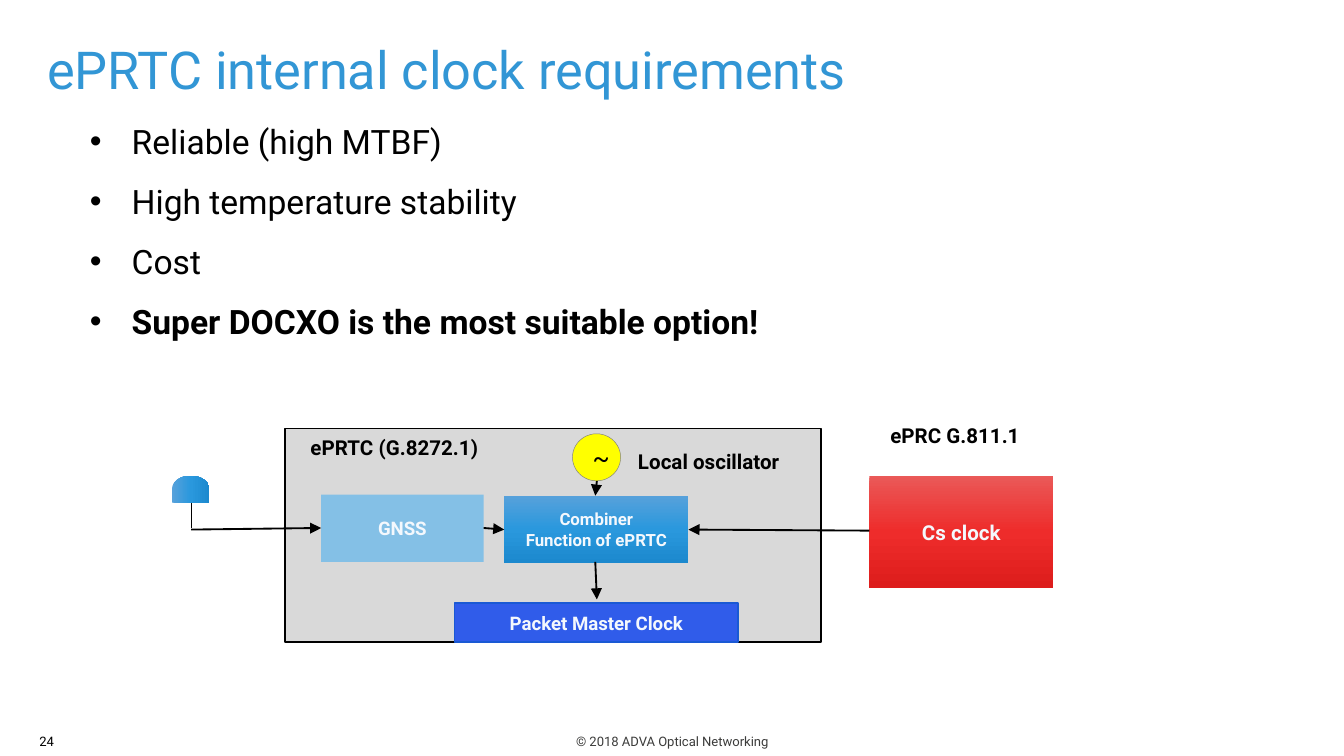
from lxml import etree
from pptx import Presentation
from pptx.dml.color import RGBColor
from pptx.enum import shapes, text
from pptx.oxml import ns
from pptx.util import Cm, Pt

rgb = RGBColor.from_string
MSO, AL, ANC = shapes.MSO_SHAPE, text.PP_ALIGN, text.MSO_ANCHOR
BLUE = ("57A1DB", "2A98DD", "1C89CE")
RED = ("EA5958", "EE2C2B", "DD1D1C")
PALE = "F4F8FD"

prs = Presentation()
prs.slide_width, prs.slide_height = Cm(25.4), Cm(14.29)
s = prs.slides.add_slide(prs.slide_layouts[6])


def write(sp, words, size, color="000000", bold=False, align=AL.CENTER, anchor=ANC.TOP):
    tf = sp.text_frame
    tf.word_wrap = True
    tf.vertical_anchor = anchor
    tf.text = words
    for p in tf.paragraphs:
        p.alignment = align
        for r in p.runs:
            r.font.name, r.font.size, r.font.bold = "Roboto", Pt(size), bold
            r.font.color.rgb = rgb(color)
    return tf


def block(kind, x, y, w, h, fill, line=None, width=1):
    sp = s.shapes.add_shape(kind, Cm(x), Cm(y), Cm(w), Cm(h))
    sp.shadow.inherit = False
    if kind == MSO.ROUNDED_RECTANGLE:
        sp.adjustments[0] = 0
    if isinstance(fill, tuple):
        sp.fill.gradient()
        sp.fill.gradient_angle = 270
        stops = sp._element.spPr.find(ns.qn("a:gradFill")).find(ns.qn("a:gsLst"))
        for old in list(stops):
            stops.remove(old)
        for i, color in enumerate(fill):
            gs = etree.SubElement(stops, ns.qn("a:gs"), pos=str(i * 50000))
            etree.SubElement(gs, ns.qn("a:srgbClr"), val=color)
    else:
        sp.fill.solid()
        sp.fill.fore_color.rgb = rgb(fill)
    if line:
        sp.line.color.rgb = rgb(line)
        sp.line.width = Pt(width)
    else:
        sp.line.fill.background()
    return sp


# Footer and page number
for x, w, words, color, align in [
    (0.64, 24.13, "© 2018 ADVA Optical Networking", "3C3C3B", AL.CENTER),
    (0, 1.27, "24", "000000", AL.RIGHT),
]:
    sp = s.shapes.add_textbox(Cm(x), Cm(13.74), Cm(w), Cm(0.56))
    write(sp, words, 7, color, align=align)

# Title
sp = s.shapes.add_textbox(Cm(0.64), Cm(0), Cm(24.13), Cm(1.9))
tf = write(sp, "ePRTC internal clock requirements", 28, "3296D5", align=AL.LEFT, anchor=ANC.BOTTOM)
tf.margin_left = Cm(0.25)
tf.margin_top = tf.margin_right = tf.margin_bottom = 0
tf.paragraphs[0].line_spacing = 0.9

# Requirements list
items = ["Reliable (high MTBF)", "High temperature stability", "Cost",
         "Super DOCXO is the most suitable option!"]
sp = s.shapes.add_textbox(Cm(1.45), Cm(2.16), Cm(22.56), Cm(11.2))
tf = write(sp, "\n".join(items), 18, align=AL.LEFT)
for i, p in enumerate(tf.paragraphs):
    pPr = p._p.get_or_add_pPr()
    pPr.set("marL", str(Cm(0.79)))
    pPr.set("indent", str(-Cm(0.79)))
    etree.SubElement(pPr, ns.qn("a:buFont"), typeface="Arial")
    etree.SubElement(pPr, ns.qn("a:buChar"), char="•")
    p.space_before, p.space_after = Pt(7.5 if i else 0), Pt(3)
tf.paragraphs[-1].runs[0].font.bold = True

# ePRTC enclosure and antenna
block(MSO.ROUNDED_RECTANGLE, 5.38, 8.1, 10.13, 4.04, "D9D9D9", "000000")
sp = block(MSO.FLOWCHART_DELAY, 3.35, 8.89, 0.51, 0.71, BLUE)
sp.rotation = 270

# Function blocks
for x, y, w, h, fill, line, words, size in [
    (6.07, 9.35, 3.07, 1.27, "84C0E6", None, "GNSS", 10),
    (8.59, 11.4, 5.36, 0.74, "305CEA", "1A59D4", "Packet Master Clock", 10),
    (16.43, 8.99, 3.48, 2.13, RED, None, "Cs clock", 11),
    (9.53, 9.37, 3.48, 1.27, BLUE, None, "Combiner\nFunction of ePRTC", 9),
]:
    sp = block(MSO.ROUNDED_RECTANGLE, x, y, w, h, fill, line)
    tf = write(sp, words, size, PALE, True, anchor=ANC.MIDDLE)
    tf.margin_left = tf.margin_right = Cm(0.18)
    tf.margin_top = tf.margin_bottom = Cm(0.1)

# Local oscillator
sp = block(MSO.OVAL, 10.82, 8.2, 0.91, 0.89, "FFFF00", "808080", 0.25)
write(sp, "~", 13.5, anchor=ANC.MIDDLE)

# Signal paths
for x1, y1, x2, y2, width, arrow in [
    (3.61, 9.5, 3.61, 9.98, 0.25, False),     # antenna lead
    (3.61, 10.01, 6.07, 9.98, 1, True),       # antenna to GNSS
    (9.14, 9.98, 9.53, 10.01, 1, True),       # GNSS to combiner
    (16.43, 10.03, 13.01, 10.01, 1, True),    # Cs clock to combiner
    (11.28, 9.09, 11.25, 9.37, 1, True),      # oscillator to combiner
    (11.25, 10.62, 11.28, 11.33, 1, True),    # combiner to packet clock
]:
    cn = s.shapes.add_connector(shapes.MSO_CONNECTOR.STRAIGHT, Cm(x1), Cm(y1), Cm(x2), Cm(y2))
    cn.line.color.rgb = rgb("000000")
    cn.line.width = Pt(width)
    if arrow:
        etree.SubElement(cn.line._get_or_add_ln(), ns.qn("a:tailEnd"), type="triangle")
    etree.SubElement(cn._element.spPr, ns.qn("a:effectLst"))

# Labels
for x, y, w, h, words in [
    (5.08, 8.15, 4.75, 0.99, "ePRTC (G.8272.1)"),
    (16.21, 7.92, 3.68, 0.69, "ePRC G.811.1"),
    (11.02, 8.41, 4.75, 0.99, "Local oscillator"),
]:
    sp = s.shapes.add_textbox(Cm(x), Cm(y), Cm(w), Cm(h))
    write(sp, words, 11, bold=True).paragraphs[0].line_spacing = 0.9

prs.save("out.pptx")
